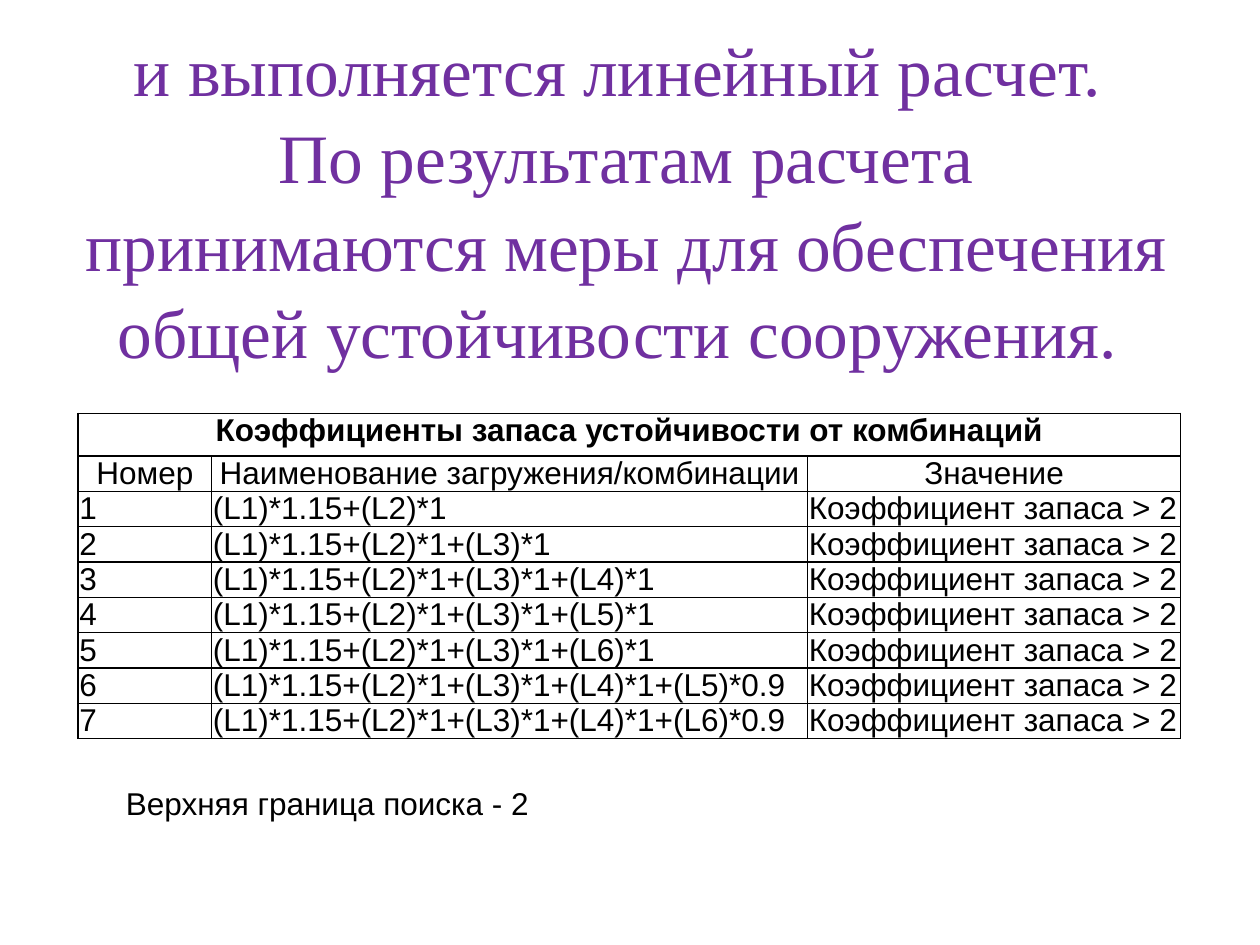
from dataclasses import dataclass

from lxml.etree import SubElement
from pptx import Presentation
from pptx.dml.color import RGBColor as RGB
from pptx.enum.text import MSO_ANCHOR as Anchor, MSO_AUTO_SIZE as Fit, PP_ALIGN as Align
from pptx.oxml.ns import qn
from pptx.util import Inches, Pt


@dataclass(frozen=True)
class Theme:
    """Colours, fonts and type sizes of the slide."""
    accent: str = "7030A0"
    ink: str = "000000"
    paper: str = "FFFFFF"
    serif: str = "Times New Roman"
    sans: str = "Arial"
    head: float = 39.6
    body: float = 18


THEME = Theme()
TITLE = ("и выполняется линейный расчет. \vПо результатам расчета принимаются "
         "меры для обеспечения общей устойчивости сооружения. ")
CAPTION = "Коэффициенты запаса устойчивости от комбинаций"
LABELS = ["Номер", "Наименование загружения/комбинации", "Значение"]
VALUE = "Коэффициент запаса > 2"
BASE = "(L1)*1.15+(L2)*1"
TAILS = ["", "+(L3)*1", "+(L3)*1+(L4)*1", "+(L3)*1+(L5)*1", "+(L3)*1+(L6)*1",
         "+(L3)*1+(L4)*1+(L5)*0.9", "+(L3)*1+(L4)*1+(L6)*0.9"]
WIDTHS = [1.06, 4.73, 2.96]
CAP_H, ROW_H = 0.34, 0.28


def write(frame, text, font=THEME.sans, size=THEME.body, color=THEME.ink,
          bold=False, align=Align.LEFT, space=None):
    """Put one formatted paragraph into a text frame."""
    para = frame.paragraphs[0]
    para.text = text
    para.alignment = align
    if space:
        para.line_spacing = space
    for run in para.runs:
        run.font.name = font
        run.font.size = Pt(size)
        run.font.bold = bold
        run.font.color.rgb = RGB.from_string(color)


def pad(item, left=0, top=0, right=0, bottom=0):
    """Set the margins of a cell or text frame in inches."""
    item.margin_left, item.margin_top = Inches(left), Inches(top)
    item.margin_right, item.margin_bottom = Inches(right), Inches(bottom)


def frame_cell(cell):
    """Give a cell thin lines on all sides and a plain fill."""
    props = cell._tc.get_or_add_tcPr()
    for side in ("lnL", "lnR", "lnT", "lnB"):
        line = SubElement(props, qn(f"a:{side}"), w=str(Pt(1)))
        fill = SubElement(line, qn("a:solidFill"))
        SubElement(fill, qn("a:srgbClr"), val=THEME.ink)
    cell.fill.solid()
    cell.fill.fore_color.rgb = RGB.from_string(THEME.paper)


def add_title(slide):
    """Fill the title placeholder."""
    title = slide.shapes.title
    title.left, title.top = Inches(0.47), Inches(0.47)
    title.width, title.height = Inches(9), Inches(2.82)
    frame = title.text_frame
    frame.word_wrap = True
    frame.auto_size = Fit.NONE
    frame.vertical_anchor = Anchor.MIDDLE
    pad(frame, left=0.1, right=0.1, bottom=0.62)
    write(frame, TITLE, font=THEME.serif, size=THEME.head, color=THEME.accent,
          align=Align.CENTER, space=1.05)


def add_grid(slide):
    """Add the table of stability factors."""
    rows = [[CAPTION, "", ""], LABELS]
    rows += [[str(num), BASE + tail, VALUE] for num, tail in enumerate(TAILS, 1)]
    high = CAP_H + ROW_H * (len(rows) - 1)
    table = slide.shapes.add_table(len(rows), len(WIDTHS), Inches(0.62), Inches(3.28),
                                   Inches(sum(WIDTHS)), Inches(high)).table
    for col, width in zip(table.columns, WIDTHS):
        col.width = Inches(width)
    for y, texts in enumerate(rows):
        table.rows[y].height = Inches(ROW_H if y else CAP_H)
        side = 0.01 if y > 1 else 0
        for x, text in enumerate(texts):
            cell = table.cell(y, x)
            pad(cell, left=side, right=side)
            frame_cell(cell)
            write(cell.text_frame, text, bold=y == 0,
                  align=Align.LEFT if y > 1 else Align.CENTER)
    table.cell(0, 0).merge(table.cell(0, len(WIDTHS) - 1))


def add_note(slide):
    """Add the line below the table."""
    box = slide.shapes.add_textbox(Inches(0), Inches(6.17), Inches(4.34), Inches(0.71))
    frame = box.text_frame
    frame.word_wrap = True
    pad(frame, left=1, top=0.05)
    write(frame, "Верхняя граница поиска - 2")


def main():
    """Build and save the slide."""
    deck = Presentation()
    deck.slide_width, deck.slide_height = Inches(10), Inches(7.5)
    slide = deck.slides.add_slide(deck.slide_layouts[5])
    add_title(slide)
    add_grid(slide)
    add_note(slide)
    deck.save("out.pptx")


if __name__ == "__main__":
    main()
